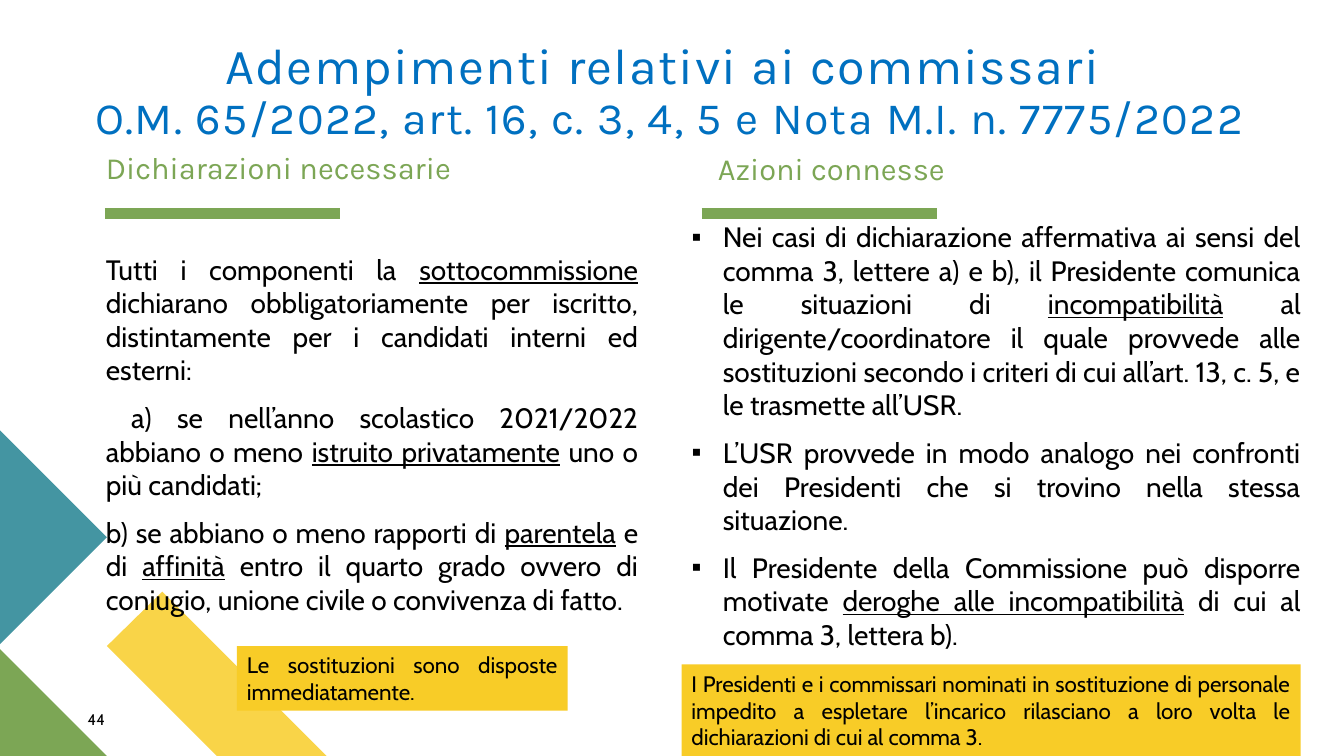
"""Build the slide on the declarations required from exam commissioners."""
from dataclasses import dataclass

from lxml import etree
from pptx import Presentation
from pptx.dml.color import RGBColor
from pptx.enum.shapes import MSO_CONNECTOR, MSO_SHAPE
from pptx.enum.text import MSO_ANCHOR, MSO_AUTO_SIZE, PP_ALIGN
from pptx.oxml.ns import qn
from pptx.util import Inches, Pt

STRAIGHT = MSO_CONNECTOR.STRAIGHT
RECTANGLE = MSO_SHAPE.RECTANGLE
TOP, MIDDLE, BOTTOM = MSO_ANCHOR.TOP, MSO_ANCHOR.MIDDLE, MSO_ANCHOR.BOTTOM
LEFT, CENTER, JUSTIFY = PP_ALIGN.LEFT, PP_ALIGN.CENTER, PP_ALIGN.JUSTIFY
NO_FIT, GROW = MSO_AUTO_SIZE.NONE, MSO_AUTO_SIZE.SHAPE_TO_FIT_TEXT

BLACK, BLUE, GREEN = "000000", "0070C0", "7CA655"
TEAL, PALE_YELLOW, YELLOW = "4495A2", "F9D448", "F8CC27"
COMPARISON_LAYOUT = 4
INDENT = Inches(0.31)


@dataclass(frozen=True)
class Span:
    text: str
    underline: bool = False
    size: float | None = None
    line_break: bool = False


@dataclass(frozen=True)
class Style:
    font: str
    size: float
    color: str
    align: PP_ALIGN = LEFT
    line_spacing: float = 1.0
    space_before: float = 0
    tracking: int = 0
    bullet: str = ""


@dataclass(frozen=True)
class Block:
    index: int
    box: tuple[float, float, float, float]
    style: Style
    paras: list[list[Span]]
    anchor: MSO_ANCHOR = TOP


@dataclass(frozen=True)
class Note:
    box: tuple[float, float, float, float]
    text: str


@dataclass(frozen=True)
class Polygon:
    color: str
    points: list[tuple[float, float]]


TITLE = Style("Karla", 36, BLUE, CENTER, 0.9, tracking=100)
HEADING = Style("Karla", 22, GREEN, line_spacing=0.9, space_before=10)
BODY = Style("Cabin", 20, BLACK, JUSTIFY, space_before=10)
LIST = Style("Cabin", 20, BLACK, JUSTIFY, space_before=10, bullet="▪")
NOTE = Style("Cabin", 16, BLACK, JUSTIFY)
NUMBER = Style("Cabin", 11, BLACK)

POLYGONS = [
    Polygon(PALE_YELLOW, [(3.24, 7.5), (2.15, 7.5), (1.06, 6.41), (1.61, 5.87)]),
    Polygon(GREEN, [(1.06, 7.5), (0, 7.5), (0, 6.44)]),
    Polygon(TEAL, [(0, 4.27), (1.06, 5.33), (0, 6.39)]),
]
BAR_LEFTS, BAR_TOP, BAR_WIDTH = (1.04, 6.96), 2.12, 2.33

BLOCKS = [
    Block(0, (0.18, 0.11, 12.94, 1.32), TITLE, [[
        Span("Adempimenti relativi ai commissari ", line_break=True),
        Span("O.M. 65/2022, art. 16, c. 3, 4, 5 e Nota M.I. n. 7775/2022", size=32),
    ]], BOTTOM),
    Block(1, (1.05, 1.52, 5.28, 0.44), HEADING, [[Span("Dichiarazioni necessarie")]]),
    Block(3, (7.12, 1.53, 5.21, 0.44), HEADING, [[Span("Azioni connesse")]]),
    Block(2, (1.05, 2.5, 5.28, 2.12), BODY, [
        [Span("Tutti i componenti la "), Span("sottocommissione", True),
         Span(" dichiarano obbligatoriamente per iscritto, distintamente per i "
              "candidati interni ed esterni:")],
        [Span(" a) se nell’anno scolastico 2021/2022 abbiano o meno "),
         Span("istruito privatamente", True), Span(" uno o più candidati; ")],
        [Span("b) se abbiano o meno rapporti di "), Span("parentela", True),
         Span(" e di "), Span("affinità", True),
         Span(" entro il quarto grado ovvero di coniugio, unione civile o "
              "convivenza di fatto. ")],
    ]),
    Block(4, (6.86, 2.18, 6.04, 2.12), LIST, [
        [Span("Nei casi di dichiarazione affermativa ai sensi del comma 3, lettere a) "
              "e b), il Presidente comunica le situazioni di "),
         Span("incompatibilità", True),
         Span(" al dirigente/coordinatore il quale provvede alle sostituzioni secondo "
              "i criteri di cui all’art. 13, c. 5, e le trasmette all’USR. ")],
        [Span("L’USR provvede in modo analogo nei confronti dei Presidenti che si "
              "trovino nella stessa situazione. ")],
        [Span("Il Presidente della Commissione può disporre motivate "),
         Span("deroghe alle incompatibilità", True),
         Span(" di cui al comma 3, lettera b).")],
    ]),
]
NOTES = [
    Note((2.35, 6.41, 3.28, 0.64), "Le sostituzioni sono disposte immediatamente."),
    Note((6.76, 6.59, 6.14, 0.91),
         "I Presidenti e i commissari nominati in sostituzione di personale impedito a "
         "espletare l’incarico rilasciano a loro volta le dichiarazioni di cui al comma 3."),
]


def paint(target, color: str) -> None:
    """Give a fill, or the fill of a line, one solid colour."""
    target.solid()
    target.fore_color.rgb = RGBColor.from_string(color)


def set_bullet(para, bullet: str) -> None:
    """Give a paragraph a hanging bullet, or none."""
    properties = para._p.get_or_add_pPr()
    indent = INDENT if bullet else 0
    properties.set("marL", str(indent))
    properties.set("indent", str(-indent))
    if bullet:
        etree.SubElement(properties, qn("a:buChar")).set("char", bullet)
    else:
        etree.SubElement(properties, qn("a:buNone"))


def write_text(frame, paras: list[list[Span]], style: Style) -> None:
    """Write paragraphs run by run in one style."""
    for number, spans in enumerate(paras):
        para = frame.add_paragraph() if number else frame.paragraphs[0]
        para.alignment = style.align
        para.line_spacing = style.line_spacing
        para.space_before = Pt(style.space_before)
        set_bullet(para, style.bullet)
        for span in spans:
            run = para.add_run()
            run.text = span.text
            font = run.font
            font.name = style.font
            font.size = Pt(span.size or style.size)
            font.bold = False
            font.underline = span.underline
            paint(font.fill, style.color)
            if style.tracking:
                run._r.get_or_add_rPr().set("spc", str(style.tracking))
            if span.line_break:
                para.add_line_break()


def prepare_frame(frame, anchor: MSO_ANCHOR) -> None:
    """Wrap the text, remove the insets and fix the size."""
    frame.word_wrap = True
    frame.auto_size = NO_FIT
    frame.vertical_anchor = anchor
    frame.margin_left = frame.margin_right = 0
    frame.margin_top = frame.margin_bottom = 0


def draw_polygon(page, polygon: Polygon) -> None:
    """Draw one filled corner shape."""
    start, *others = [(Inches(x), Inches(y)) for x, y in polygon.points]
    builder = page.shapes.build_freeform(*start)
    builder.add_line_segments(others, close=True)
    shape = builder.convert_to_shape()
    shape.shadow.inherit = False
    paint(shape.fill, polygon.color)
    shape.line.fill.background()


def draw_bar(page, left: float) -> None:
    """Draw the thick line under a heading."""
    bar = page.shapes.add_connector(STRAIGHT, Inches(left), Inches(BAR_TOP),
                                    Inches(left + BAR_WIDTH), Inches(BAR_TOP))
    paint(bar.line.fill, GREEN)
    bar.line.width = Pt(8)
    etree.SubElement(bar.element.spPr, qn("a:effectLst"))


def fill_block(page, block: Block) -> None:
    """Place a placeholder in front of the decoration and write its text."""
    holder = page.placeholders[block.index]
    holder.left, holder.top, holder.width, holder.height = map(Inches, block.box)
    holder.element.getparent().append(holder.element)
    prepare_frame(holder.text_frame, block.anchor)
    write_text(holder.text_frame, block.paras, block.style)


def draw_note(page, note: Note) -> None:
    """Draw a yellow note."""
    shape = page.shapes.add_shape(RECTANGLE, *map(Inches, note.box))
    shape.shadow.inherit = False
    paint(shape.fill, YELLOW)
    shape.line.fill.background()
    frame = shape.text_frame
    frame.word_wrap = True
    frame.auto_size = GROW
    frame.vertical_anchor = MIDDLE
    write_text(frame, [[Span(note.text)]], NOTE)


def main() -> None:
    """Build and save the deck."""
    deck = Presentation()
    deck.slide_width, deck.slide_height = Inches(13.33), Inches(7.5)
    page = deck.slides.add_slide(deck.slide_layouts[COMPARISON_LAYOUT])
    for polygon in POLYGONS:
        draw_polygon(page, polygon)
    for left in BAR_LEFTS:
        draw_bar(page, left)
    for block in BLOCKS:
        fill_block(page, block)
    number = page.shapes.add_textbox(*map(Inches, (0.87, 7.05, 0.57, 0.27)))
    prepare_frame(number.text_frame, TOP)
    write_text(number.text_frame, [[Span("44")]], NUMBER)
    for note in NOTES:
        draw_note(page, note)
    deck.save("out.pptx")


if __name__ == "__main__":
    main()
